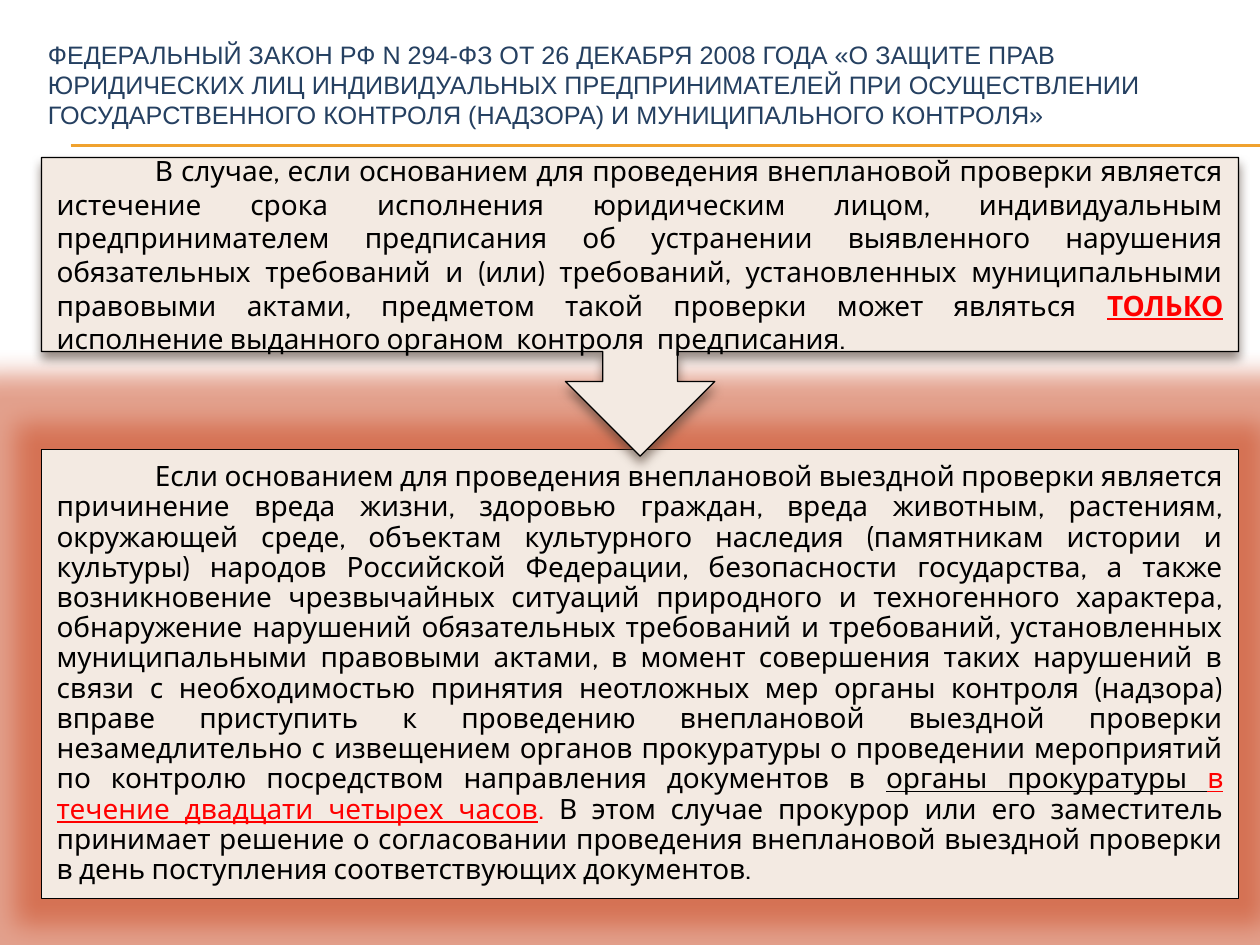
import pptx
import pptx.util
import pptx.dml.color
import pptx.enum.shapes
import pptx.enum.text
import pptx.oxml
import pptx.oxml.ns

Inches = pptx.util.Inches
Pt = pptx.util.Pt
SHAPE = pptx.enum.shapes.MSO_SHAPE
ALIGN = pptx.enum.text.PP_ALIGN
NS = pptx.oxml.ns.nsdecls("a")

BLACK, RED, CREAM = "000000", "FF0000", "F3EAE2"
LEFT, WIDTH = 0.33, 9.5

TITLE = (
    "ФЕДЕРАЛЬНЫЙ ЗАКОН РФ N 294-ФЗ ОТ 26 ДЕКАБРЯ 2008 ГОДА «О ЗАЩИТЕ ПРАВ "
    "ЮРИДИЧЕСКИХ ЛИЦ ИНДИВИДУАЛЬНЫХ ПРЕДПРИНИМАТЕЛЕЙ ПРИ ОСУЩЕСТВЛЕНИИ "
    "ГОСУДАРСТВЕННОГО КОНТРОЛЯ (НАДЗОРА) И МУНИЦИПАЛЬНОГО КОНТРОЛЯ»"
)
ORDER = [
    ("\tВ случае, если основанием для проведения внеплановой проверки является "
     "истечение срока исполнения юридическим лицом, индивидуальным "
     "предпринимателем предписания об устранении выявленного нарушения "
     "обязательных требований и (или) требований, установленных муниципальными "
     "правовыми актами, предметом такой проверки может являться ", {}),
    ("ТОЛЬКО", {"color": RED, "bold": True, "under": True}),
    (" ", {"color": RED}),
    ("исполнение выданного органом  контроля  предписания.", {}),
]
HARM = [
    ("\tЕсли основанием для проведения внеплановой выездной проверки является "
     "причинение вреда жизни, здоровью граждан, вреда животным, растениям, "
     "окружающей среде, объектам культурного наследия (памятникам истории и "
     "культуры) народов Российской Федерации, безопасности государства, а также "
     "возникновение чрезвычайных ситуаций природного и техногенного характера, "
     "обнаружение нарушений обязательных требований и требований, установленных "
     "муниципальными правовыми актами, в момент совершения таких нарушений в "
     "связи с необходимостью принятия неотложных мер органы контроля (надзора) "
     "вправе приступить к проведению внеплановой выездной проверки "
     "незамедлительно с извещением органов прокуратуры о проведении мероприятий "
     "по контролю посредством направления документов в ", {}),
    ("органы прокуратуры ", {"under": True}),
    ("в течение двадцати четырех часов", {"color": RED, "under": True}),
    (". ", {"color": RED}),
    ("В этом случае прокурор или его заместитель принимает решение о "
     "согласовании проведения внеплановой выездной проверки в день поступления "
     "соответствующих документов.", {}),
]
GLOW = '<a:glow rad="381000"><a:srgbClr val="C8431B"><a:alpha val="50000"/></a:srgbClr></a:glow>'
SHADOW = (
    '<a:outerShdw blurRad="76200" dist="50800" dir="5400000" rotWithShape="0">'
    '<a:srgbClr val="4E3B30"><a:alpha val="60000"/></a:srgbClr></a:outerShdw>'
)


def rgb(code):
    return pptx.dml.color.RGBColor.from_string(code)


def effect(shape, inner=""):
    """Replace the theme effect with the given one, or with none."""
    xml = f"<a:effectLst {NS}>{inner}</a:effectLst>"
    shape._element.spPr.append(pptx.oxml.parse_xml(xml))


def write(para, text, size=16, font="Cabin", color=BLACK, bold=False, under=False):
    run = para.add_run()
    run.text = text
    run.font.size = Pt(size)
    run.font.name = font
    run.font.bold = bold
    run.font.underline = under
    run.font.color.rgb = rgb(color)


def head(slide):
    title = slide.shapes.title
    title.left, title.top = Inches(0.28), Inches(0.21)
    title.width, title.height = Inches(9.5), Inches(0.92)
    frame = title.text_frame
    frame.word_wrap = True
    frame.vertical_anchor = pptx.enum.text.MSO_ANCHOR.MIDDLE
    para = frame.paragraphs[0]
    para.alignment = ALIGN.LEFT
    write(para, TITLE, size=14.4, font="Arial", color="254061")


def rule(slide, top):
    line = slide.shapes.add_connector(
        pptx.enum.shapes.MSO_CONNECTOR.STRAIGHT,
        Inches(0.56), Inches(top), Inches(10), Inches(top))
    line.line.color.rgb = rgb("F0A22E")
    line.line.width = Pt(0.75)
    effect(line)


def panel(slide, kind, top, height, inner, turn=0):
    shape = slide.shapes.add_shape(
        kind, Inches(LEFT), Inches(top), Inches(WIDTH), Inches(height))
    shape.rotation = turn
    shape.fill.solid()
    shape.fill.fore_color.rgb = rgb(CREAM)
    shape.line.color.rgb = rgb(BLACK)
    shape.line.width = Pt(0.75)
    effect(shape, inner)


def body(slide, top, height, runs, space=1.0, after=0):
    box = slide.shapes.add_textbox(
        Inches(LEFT), Inches(top), Inches(WIDTH), Inches(height))
    frame = box.text_frame
    frame.word_wrap = True
    frame.vertical_anchor = pptx.enum.text.MSO_ANCHOR.MIDDLE
    frame.margin_left = frame.margin_right = Inches(0.12)
    frame.margin_top = frame.margin_bottom = Inches(0.12)
    para = frame.paragraphs[0]
    para.alignment = ALIGN.JUSTIFY
    para.line_spacing = space
    para.space_after = Pt(after)
    para._p.get_or_add_pPr().set("defTabSz", str(Inches(0.78)))
    for text, form in runs:
        write(para, text, **form)


def main():
    deck = pptx.Presentation()
    deck.slide_width, deck.slide_height = Inches(10), Inches(7.5)
    slide = deck.slides.add_slide(deck.slide_layouts[5])
    for top in (1.15, 1.16):
        rule(slide, top)
    head(slide)
    panel(slide, SHAPE.RECTANGLE, 3.57, 3.56, GLOW)
    body(slide, 3.57, 3.56, HARM, space=0.9, after=5.6)
    panel(slide, SHAPE.UP_ARROW_CALLOUT, 1.25, 2.37, SHADOW, turn=180)
    body(slide, 1.25, 1.54, ORDER)
    deck.save("out.pptx")


if __name__ == "__main__":
    main()
